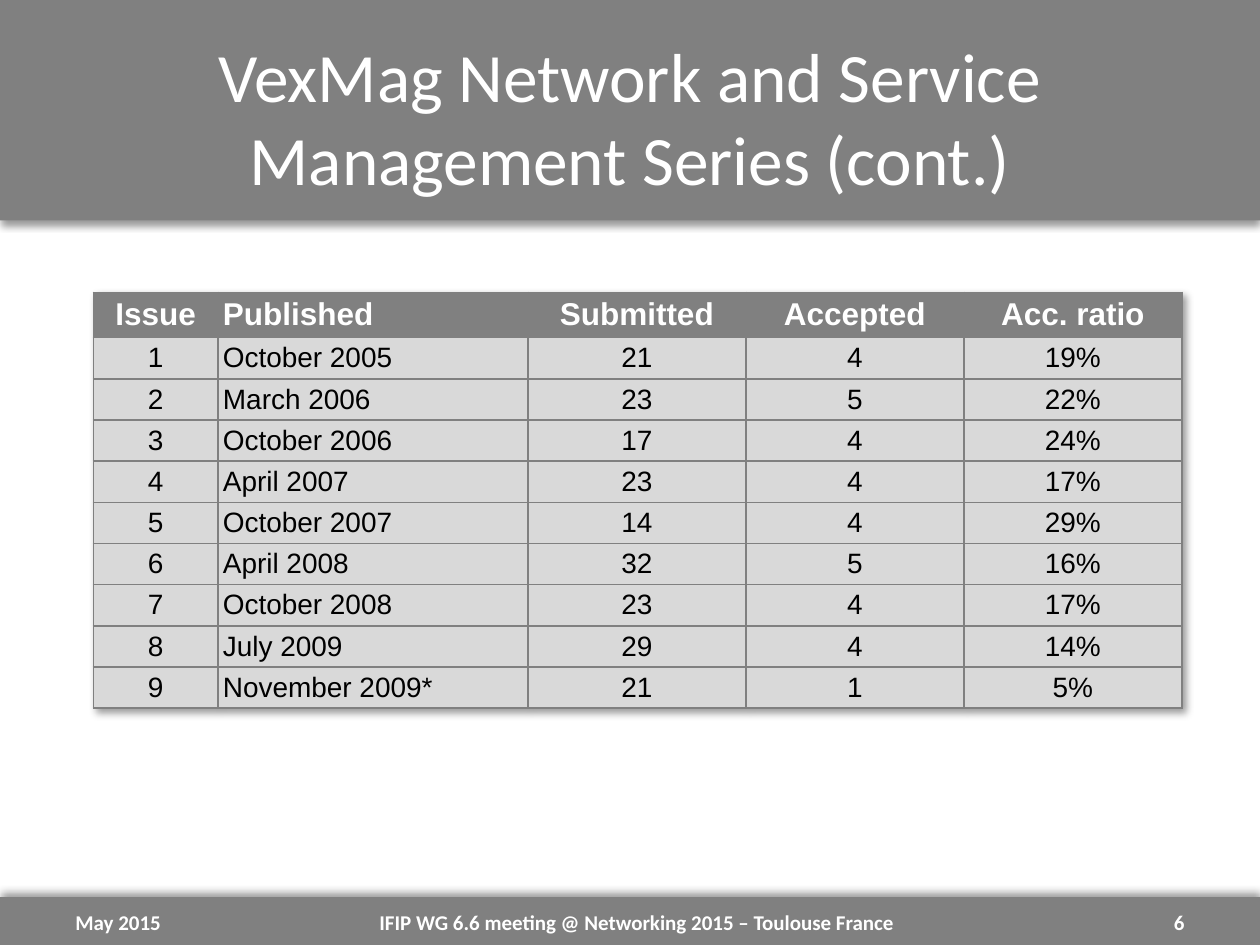
import pptx
import pptx.dml.color
import pptx.enum.shapes
import pptx.enum.text
import pptx.oxml
import pptx.oxml.ns
import pptx.util

PX = 9144  # EMU per px, 100 px to the inch
GRAY, LIGHT, WHITE, BLACK = "808080", "D9D9D9", "FFFFFF", "000000"
ALIGN = pptx.enum.text.PP_ALIGN
MIDDLE = pptx.enum.text.MSO_ANCHOR.MIDDLE

COLUMNS = [("Issue", 99), ("Published", 246), ("Submitted", 173),
           ("Accepted", 173), ("Acc. ratio", 173)]
ISSUES = [
    ("1", "October 2005", "21", "4", "19%"),
    ("2", "March 2006", "23", "5", "22%"),
    ("3", "October 2006", "17", "4", "24%"),
    ("4", "April 2007", "23", "4", "17%"),
    ("5", "October 2007", "14", "4", "29%"),
    ("6", "April 2008", "32", "5", "16%"),
    ("7", "October 2008", "23", "4", "17%"),
    ("8", "July 2009", "29", "4", "14%"),
    ("9", "November 2009*", "21", "1", "5%"),
]


def emu(*lengths):
    return [pptx.util.Emu(n * PX) for n in lengths]


def rgb(color):
    return pptx.dml.color.RGBColor.from_string(color)


def set_attrs(obj, values):
    for name, value in values.items():
        setattr(obj, name, value)


def xml(tag, attrs="", inner=""):
    return f"<a:{tag} {pptx.oxml.ns.nsdecls('a')} {attrs}>{inner}</a:{tag}>"


def shadow(angle):
    """Return an effect list with a soft shadow cast at the angle in degrees."""
    color = f'<a:srgbClr val="{BLACK}"><a:alpha val="40000"/></a:srgbClr>'
    outer = (f'<a:outerShdw blurRad="50800" dist="38100" dir="{angle * 60000}" '
             f'rotWithShape="0">{color}</a:outerShdw>')
    return pptx.oxml.parse_xml(xml("effectLst", inner=outer))


def write(tf, text, align, size, font, color, bold=False):
    p = tf.paragraphs[0]
    p.alignment = align
    r = p.add_run()
    r.text = text
    set_attrs(r.font, {"size": pptx.util.Pt(size), "name": font, "bold": bold})
    r.font.color.rgb = rgb(color)


def add_band(slide, x, y, w, h, angle):
    sp = slide.shapes.add_shape(
        pptx.enum.shapes.MSO_SHAPE.RECTANGLE, *emu(x, y, w, h))
    sp.fill.solid()
    sp.fill.fore_color.rgb = rgb(GRAY)
    sp.line.fill.background()
    sp._element.spPr.append(shadow(angle))


def add_header(slide, x, y, w, h):
    add_band(slide, x, y, w, h, 90)
    title = slide.shapes.title
    left, top, width, height = emu(x + 50, y + 30, w - 100, h - 50)
    set_attrs(title, {"left": left, "top": top, "width": width, "height": height})
    set_attrs(title.text_frame, {
        "word_wrap": True, "vertical_anchor": MIDDLE,
        "auto_size": pptx.enum.text.MSO_AUTO_SIZE.NONE})
    write(title.text_frame, "VexMag Network and Service Management Series (cont.)",
          ALIGN.CENTER, 39.6, "Calibri", WHITE)
    slide.shapes._spTree.append(title._element)  # bring in front of the band


def add_footer(slide, x, y, w, h):
    add_band(slide, x, y, w, h, 270)
    side = 233
    parts = [
        ("May 2015", ALIGN.LEFT, 50, side),
        ("IFIP WG 6.6 meeting @ Networking 2015 – Toulouse France",
         ALIGN.CENTER, 283, 445),
        ("6", ALIGN.RIGHT, w - 50 - side, side),
    ]
    for text, align, dx, width in parts:
        tf = slide.shapes.add_textbox(*emu(x + dx, y, width, 40)).text_frame
        set_attrs(tf, {"word_wrap": True, "vertical_anchor": MIDDLE})
        write(tf, text, align, 12, "Calibri", WHITE, bold=True)


def format_cell(cell, fill):
    margin, = emu(4)
    set_attrs(cell, {"margin_left": margin, "margin_right": margin,
                     "margin_top": margin, "margin_bottom": margin,
                     "vertical_anchor": MIDDLE})
    line = f'<a:solidFill><a:srgbClr val="{GRAY}"/></a:solidFill>'
    tcPr = cell._tc.get_or_add_tcPr()
    for edge in ("lnL", "lnR", "lnT", "lnB"):
        tcPr.append(pptx.oxml.parse_xml(xml(edge, 'w="12700"', line)))
    cell.fill.solid()
    cell.fill.fore_color.rgb = rgb(fill)


def add_issue_table(slide, x, y, w, h):
    rows = [[name for name, _ in COLUMNS]] + ISSUES
    frame = slide.shapes.add_table(len(rows), len(COLUMNS), *emu(x, y, w, h))
    table = frame.table
    table.horz_banding = False
    table._tbl.tblPr.insert(0, shadow(45))
    for column, (_, width) in zip(table.columns, COLUMNS):
        column.width, = emu(width)
    for i, values in enumerate(rows):
        head = i == 0
        table.rows[i].height, = emu(29 if head else 27)
        for j, text in enumerate(values):
            cell = table.cell(i, j)
            format_cell(cell, GRAY if head else LIGHT)
            write(cell.text_frame, text, ALIGN.LEFT if j == 1 else ALIGN.CENTER,
                  18 if head else 16, "Arial", WHITE if head else BLACK, head)
    frame.height, = emu(h)


def main():
    prs = pptx.Presentation()
    prs.slide_width, prs.slide_height = emu(1000, 750)
    slide = prs.slides.add_slide(prs.slide_layouts[5])
    add_header(slide, 0, 0, 1000, 175)
    add_issue_table(slide, 74, 232, 864, 348)
    add_footer(slide, 0, 712, 1000, 38)
    prs.save("out.pptx")


if __name__ == "__main__":
    main()
